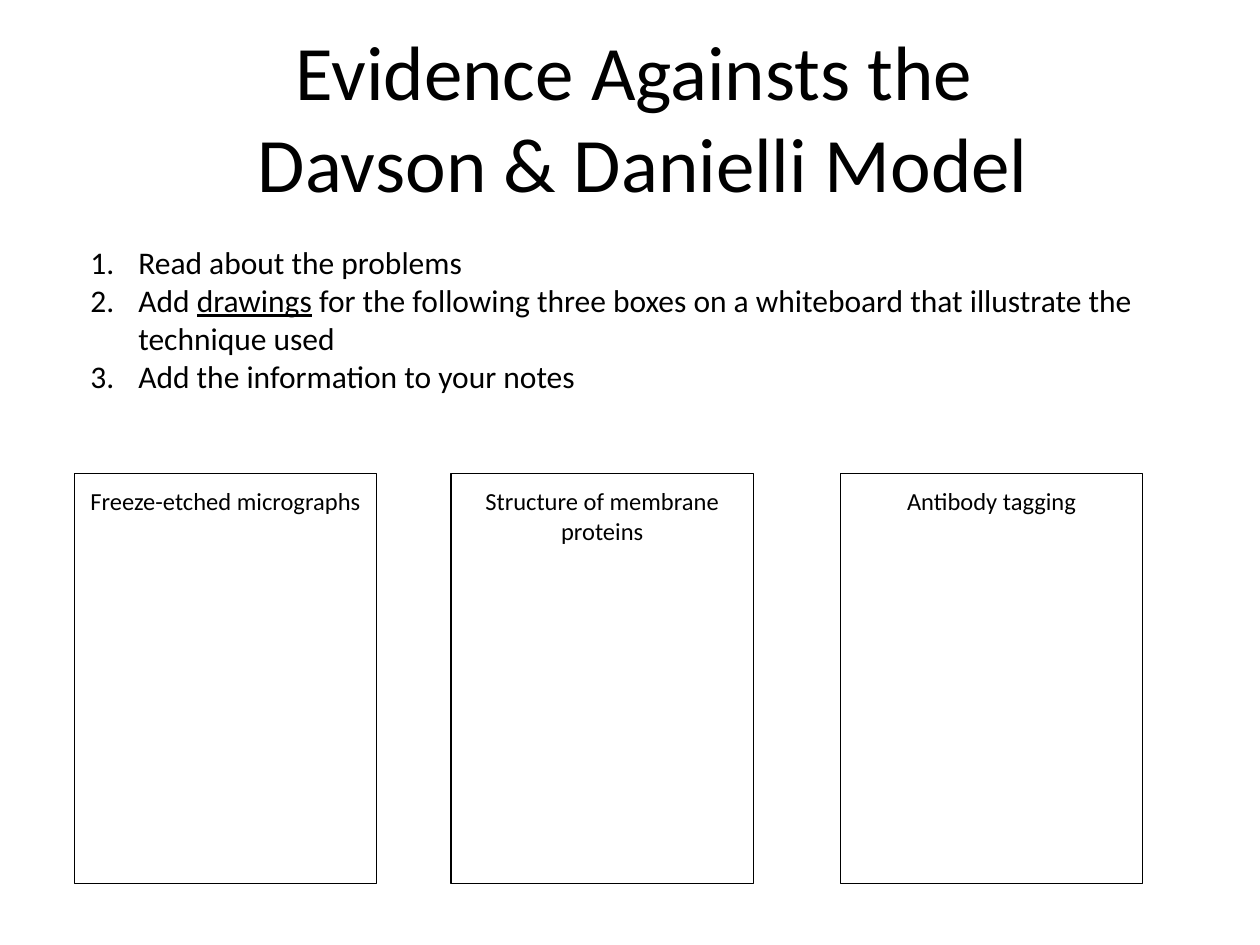
"""Build a slide on evidence against the Davson and Danielli membrane model."""
from dataclasses import dataclass

from lxml.etree import SubElement
from pptx import Presentation
from pptx.dml.color import RGBColor
from pptx.enum.shapes import MSO_SHAPE as Preset
from pptx.enum.text import MSO_ANCHOR as Anchor, PP_ALIGN as Align
from pptx.oxml.ns import qn
from pptx.util import Inches, Pt

WIDTH, HEIGHT = Inches(10), Inches(7.5)
COLORS = {"ink": "000000"}
INK = RGBColor.from_string(COLORS["ink"])
INSET = Inches(0.1)
FRAME_FORMAT = {
    "word_wrap": True,
    "margin_left": INSET,
    "margin_right": INSET,
    "margin_top": INSET,
    "margin_bottom": INSET,
}
NUMBER_FORMAT = {"marL": Inches(0.5), "indent": Inches(-0.38)}


@dataclass(frozen=True)
class Region:
    """A rectangle given in shares of the slide's size."""
    left: float
    top: float
    width: float
    height: float

    def lengths(self) -> tuple[int, ...]:
        """Return left, top, width and height in EMU."""
        return (round(self.left * WIDTH), round(self.top * HEIGHT),
                round(self.width * WIDTH), round(self.height * HEIGHT))


@dataclass(frozen=True)
class DrawingBox:
    """A labelled empty box in which a technique is drawn."""
    label: str
    left: float


HEADING = "Evidence Againsts the \vDavson & Danielli Model"
STEPS = (
    ("Read about the problems",),
    ("Add ", "drawings",
     " for the following three boxes on a whiteboard that illustrate the technique used"),
    ("Add the information to your notes",),
)
UNDERLINED = {"drawings"}
DRAWING_BOXES = (
    DrawingBox("Freeze-etched micrographs", 0.059),
    DrawingBox("Structure of membrane proteins", 0.358),
    DrawingBox("Antibody tagging", 0.667),
)
BOX_TOP, BOX_WIDTH, BOX_HEIGHT = 3.76 / 7.5, 0.24, 3.25 / 7.5


def apply(target, values: dict) -> None:
    """Set every attribute named in values on the target."""
    for name, value in values.items():
        setattr(target, name, value)


def style_runs(paragraph, size: float) -> None:
    """Give each run of a paragraph the slide's font and ink."""
    for run in paragraph.runs:
        apply(run.font, {"name": "Calibri", "size": Pt(size)})
        run.font.color.rgb = INK


def write_centred(frame, text: str, size: float, anchor: Anchor) -> None:
    """Fill a text frame with one centred paragraph."""
    apply(frame, FRAME_FORMAT | {"vertical_anchor": anchor})
    paragraph = frame.paragraphs[0]
    apply(paragraph, {"text": text, "alignment": Align.CENTER})
    style_runs(paragraph, size)


def number_step(paragraph) -> None:
    """Give a paragraph a hanging automatic number."""
    properties = paragraph._p.get_or_add_pPr()
    for name, length in NUMBER_FORMAT.items():
        properties.set(name, str(length))
    SubElement(SubElement(properties, qn("a:buClr")), qn("a:srgbClr"), val=COLORS["ink"])
    SubElement(properties, qn("a:buFont"), typeface="Calibri")
    SubElement(properties, qn("a:buAutoNum"), type="arabicPeriod")


def draw_steps(slide, region: Region) -> None:
    """Draw the numbered instructions."""
    frame = slide.shapes.add_textbox(*region.lengths()).text_frame
    apply(frame, FRAME_FORMAT)
    for index, phrases in enumerate(STEPS):
        step = frame.add_paragraph() if index else frame.paragraphs[0]
        number_step(step)
        for phrase in phrases:
            run = step.add_run()
            run.text = phrase
            if phrase in UNDERLINED:
                run.font.underline = True
        style_runs(step, 18)


def draw_box(slide, box: DrawingBox) -> None:
    """Draw one outlined box with its label at the top."""
    region = Region(box.left, BOX_TOP, BOX_WIDTH, BOX_HEIGHT)
    outline = slide.shapes.add_shape(Preset.RECTANGLE, *region.lengths())
    outline.shadow.inherit = False
    outline.fill.background()
    outline.line.color.rgb = INK
    outline.line.width = Pt(0.75)
    write_centred(outline.text_frame, box.label, 14, Anchor.TOP)


def main() -> None:
    """Create the presentation and save it."""
    deck = Presentation()
    apply(deck, {"slide_width": WIDTH, "slide_height": HEIGHT})
    slide = deck.slides.add_slide(deck.slide_layouts[6])
    heading = slide.shapes.add_textbox(*Region(0.021, 0.5 / 7.5, 0.979, 1.25 / 7.5).lengths())
    write_centred(heading.text_frame, HEADING, 44, Anchor.BOTTOM)
    draw_steps(slide, Region(0.05, 1.83 / 7.5, 0.9, 5.36 / 7.5))
    for box in DRAWING_BOXES:
        draw_box(slide, box)
    deck.save("out.pptx")


if __name__ == "__main__":
    main()
